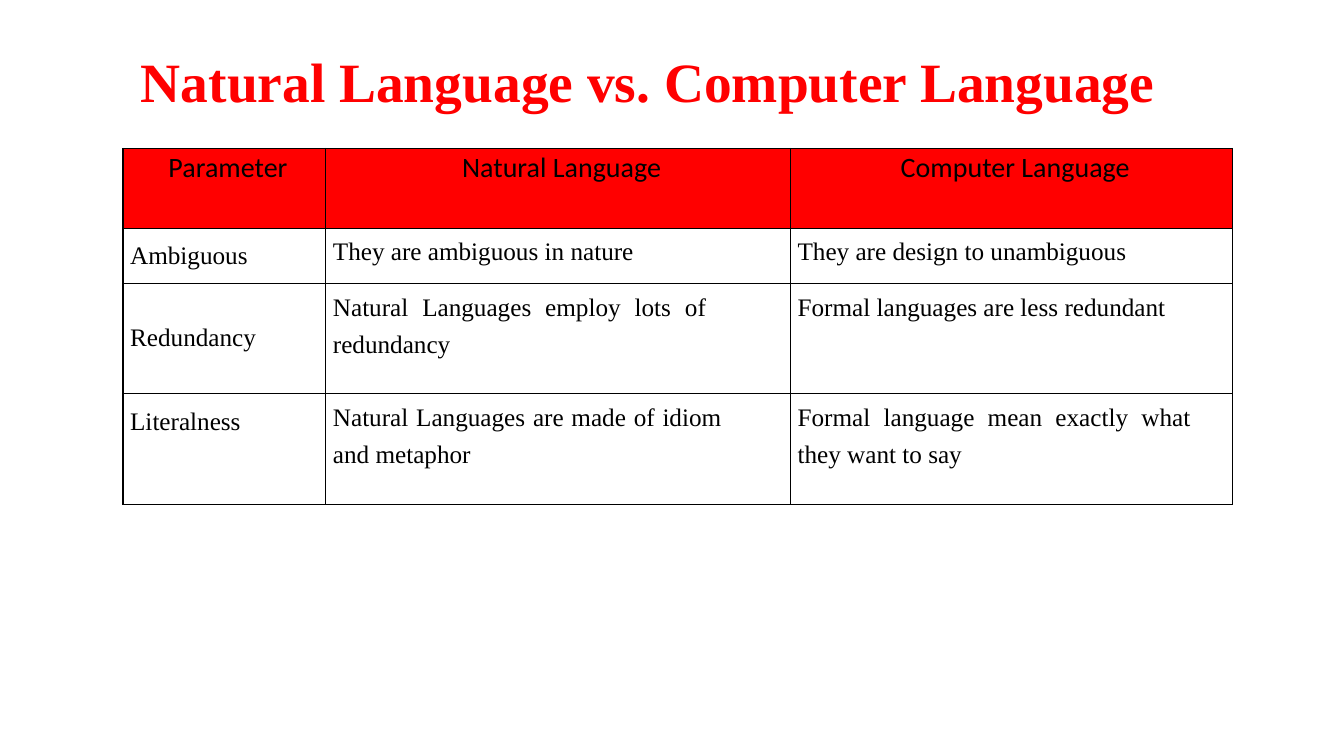
from lxml.etree import SubElement
from pptx import Presentation
from pptx.dml.color import RGBColor
from pptx.enum.text import MSO_ANCHOR as Anchor, PP_ALIGN as Align
from pptx.oxml.ns import qn
from pptx.util import Cm, Pt

RED, BLACK, WHITE = "FF0000", "000000", "FFFFFF"
SERIF = "Times New Roman"
COLUMN_WIDTHS = [5.11, 11.71, 11.15]
ROW_HEIGHTS = [2.01, 1.4, 2.77, 2.79]
ROWS = [
    ["Parameter", "Natural Language", "Computer Language"],
    ["Ambiguous", "They are ambiguous in nature", "They are design to unambiguous"],
    ["Redundancy", "Natural Languages employ lots of redundancy",
     "Formal languages are less redundant"],
    ["Literalness", "Natural Languages are made of idiom and metaphor",
     "Formal language mean exactly what they want to say"],
]
RIGHT_MARGINS = {(2, 1): 2.12, (3, 1): 1.73, (3, 2): 1.06}
TOP_MARGINS = {(2, 0): 0.67}


def color(value):
    """Turn a hex string into a colour."""
    return RGBColor.from_string(value)


def set_text(text_frame, text, font, size, ink, align, spacing, bold=False):
    """Write one paragraph and format its run."""
    text_frame.text = text
    text_frame.word_wrap = True
    paragraph = text_frame.paragraphs[0]
    paragraph.alignment = align
    paragraph.line_spacing = spacing
    run_font = paragraph.runs[0].font
    run_font.name, run_font.size, run_font.bold = font, Pt(size), bold
    run_font.color.rgb = color(ink)


def set_borders(cell, ink, width):
    """Draw a line on all four sides of a cell."""
    properties = cell._tc.get_or_add_tcPr()
    for position, side in enumerate(("lnL", "lnR", "lnT", "lnB")):
        line = SubElement(properties, qn(f"a:{side}"), w=str(Pt(width)))
        fill = SubElement(line, qn("a:solidFill"))
        SubElement(fill, qn("a:srgbClr"), val=ink)
        properties.remove(line)
        properties.insert(position, line)


def add_title(slide, left, top, width, height):
    """Place the slide heading in its box."""
    shape = slide.shapes.add_textbox(Cm(left), Cm(top), Cm(width), Cm(height))
    text_frame = shape.text_frame
    set_text(text_frame, "Natural Language vs. Computer Language",
             SERIF, 39.6, RED, Align.LEFT, 0.9, bold=True)
    text_frame.vertical_anchor = Anchor.MIDDLE
    text_frame.margin_left = Cm(1.22)


def add_comparison(slide, left, top):
    """Place the comparison table from its top left corner."""
    table = slide.shapes.add_table(
        len(ROWS), len(COLUMN_WIDTHS), Cm(left), Cm(top),
        Cm(sum(COLUMN_WIDTHS)), Cm(sum(ROW_HEIGHTS))).table
    for column, width in zip(table.columns, COLUMN_WIDTHS):
        column.width = Cm(width)
    for row, height in zip(table.rows, ROW_HEIGHTS):
        row.height = Cm(height)
    for row_index, texts in enumerate(ROWS):
        for column_index, text in enumerate(texts):
            cell = table.cell(row_index, column_index)
            place = row_index, column_index
            cell.margin_left, cell.margin_bottom = Cm(0.18), 0
            cell.margin_right = Cm(RIGHT_MARGINS.get(place, 0))
            cell.margin_top = Cm(TOP_MARGINS.get(place, 0))
            cell.fill.solid()
            cell.fill.fore_color.rgb = color(WHITE if row_index else RED)
            if row_index == 0:
                set_text(cell.text_frame, text, "Calibri", 20, BLACK, Align.CENTER, Pt(26))
            else:
                spacing = Pt(27) if column_index else 1.5
                set_text(cell.text_frame, text, SERIF, 18, BLACK, Align.JUSTIFY, spacing)
            set_borders(cell, BLACK, 1)


def main():
    """Build the slide and save it."""
    presentation = Presentation()
    presentation.slide_width, presentation.slide_height = Cm(33.87), Cm(19.05)
    slide = presentation.slides.add_slide(presentation.slide_layouts[6])
    add_title(slide, 2.33, 1.02, 29.21, 2.21)
    add_comparison(slide, 3.1, 3.74)
    presentation.save("out.pptx")


if __name__ == "__main__":
    main()
